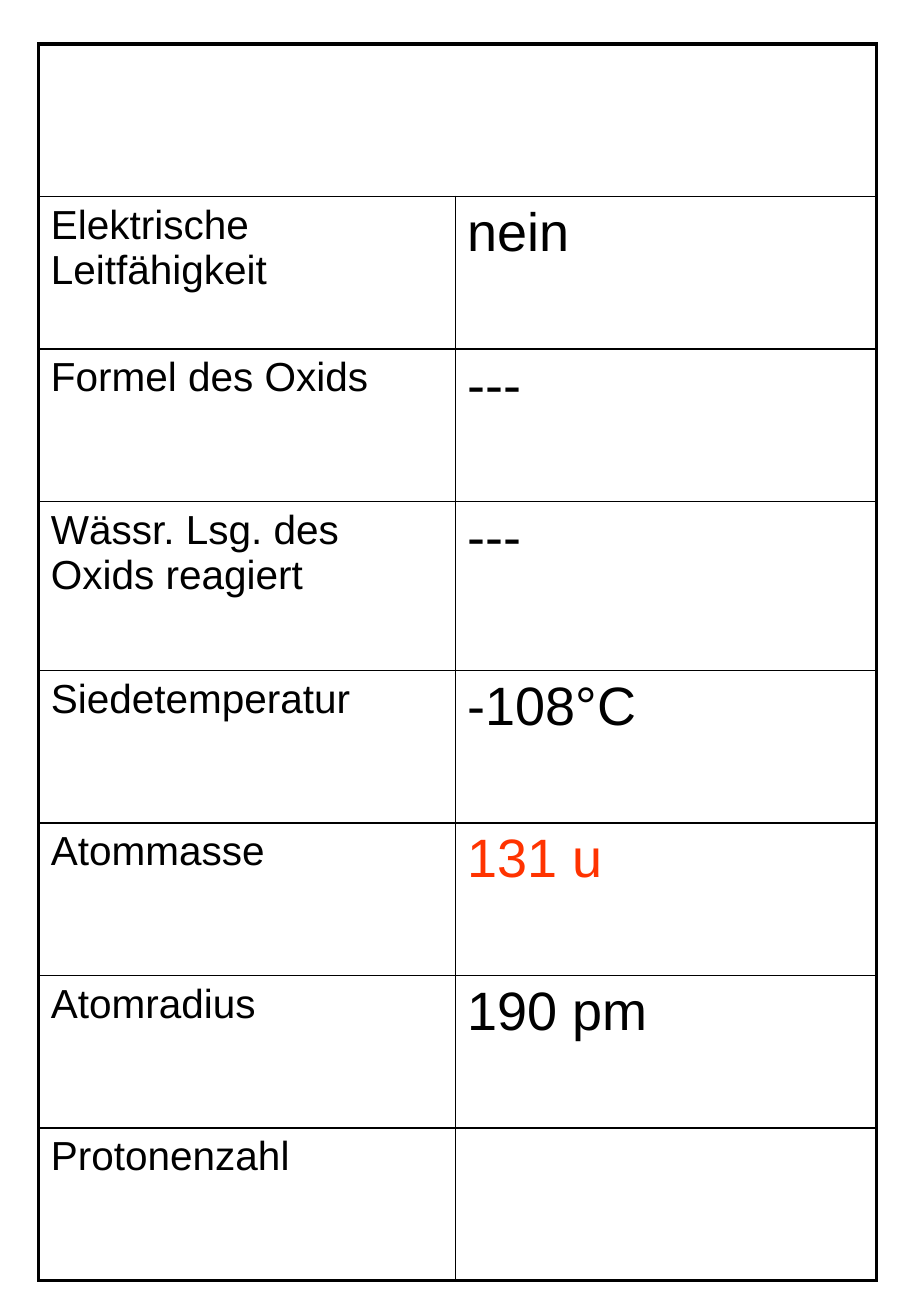
from dataclasses import dataclass

from lxml import etree
from pptx import Presentation
from pptx import util as u
from pptx.dml.color import RGBColor
from pptx.oxml import ns

# Content: property, value
PROPERTIES = [
    ("Elektrische Leitfähigkeit", "nein"),
    ("Formel des Oxids", "---"),
    ("Wässr. Lsg. des Oxids reagiert", "---"),
    ("Siedetemperatur", "-108°C"),
    ("Atommasse", "131 u"),
    ("Atomradius", "190 pm"),
    ("Protonenzahl", ""),
]
HIGHLIGHTED = "131 u"


@dataclass(frozen=True)
class Theme:
    font: str = "Arial"
    ink: str = "000000"
    accent: str = "FF3300"
    label_size: float = 24
    value_size: float = 32
    outer_line: float = 2.25
    inner_line: float = 1


THEME = Theme()

# Layout in points
PAGE_WIDTH, PAGE_HEIGHT = 540, 779.76
LEFT, TOP = 23, 26
COLUMN_WIDTHS = [247, 249.4]
ROW_HEIGHT, TALL_ROW_HEIGHT, TALL_ROW = 90.4, 100, 3


def add_borders(cell, widths):
    properties = cell._tc.get_or_add_tcPr()
    for side, width in widths.items():
        line = etree.SubElement(properties, ns.qn(f"a:ln{side}"), w=str(int(u.Pt(width))))
        fill = etree.SubElement(line, ns.qn("a:solidFill"))
        etree.SubElement(fill, ns.qn("a:srgbClr"), val=THEME.ink)


def write_text(cell, words, size, color):
    cell.margin_left = cell.margin_right = u.Pt(7.2)
    cell.margin_top = cell.margin_bottom = u.Pt(3.6)
    cell.text_frame.text = words
    para = cell.text_frame.paragraphs[0]
    spacing = etree.SubElement(para._p.get_or_add_pPr(), ns.qn("a:spcBef"))
    etree.SubElement(spacing, ns.qn("a:spcPct"), val="20000")
    para.font.size = u.Pt(size)
    for span in para.runs:
        span.font.size = u.Pt(size)
        span.font.name = THEME.font
        span.font.color.rgb = RGBColor.from_string(color)


def main():
    deck = Presentation()
    deck.slide_width, deck.slide_height = u.Pt(PAGE_WIDTH), u.Pt(PAGE_HEIGHT)
    page = deck.slides.add_slide(deck.slide_layouts[6])

    # Table grid with an empty merged heading row
    heights = [ROW_HEIGHT] * (len(PROPERTIES) + 1)
    heights[TALL_ROW] = TALL_ROW_HEIGHT
    table = page.shapes.add_table(
        len(heights), len(COLUMN_WIDTHS), u.Pt(LEFT), u.Pt(TOP),
        u.Pt(sum(COLUMN_WIDTHS)), u.Pt(sum(heights))).table
    table.first_row = table.horz_banding = False
    for column, width in zip(table.columns, COLUMN_WIDTHS):
        column.width = u.Pt(width)
    for row, height in zip(table.rows, heights):
        row.height = u.Pt(height)
    table.cell(0, 0).merge(table.cell(0, 1))

    # Labels and values
    for row, (label, value) in enumerate(PROPERTIES, start=1):
        color = THEME.accent if value == HIGHLIGHTED else THEME.ink
        write_text(table.cell(row, 0), label, THEME.label_size, THEME.ink)
        write_text(table.cell(row, 1), value, THEME.value_size, color)

    # Heavy frame, thin inner lines
    last = len(heights) - 1
    for row in range(len(heights)):
        for column in range(len(COLUMN_WIDTHS)):
            cell = table.cell(row, column)
            on_frame = {
                "L": column == 0 or row == 0,
                "R": column == 1 or row == 0,
                "T": row == 0,
                "B": row == last,
            }
            add_borders(cell, {side: THEME.outer_line if outer else THEME.inner_line
                               for side, outer in on_frame.items()})
            cell.fill.background()

    deck.save("out.pptx")


if __name__ == "__main__":
    main()
